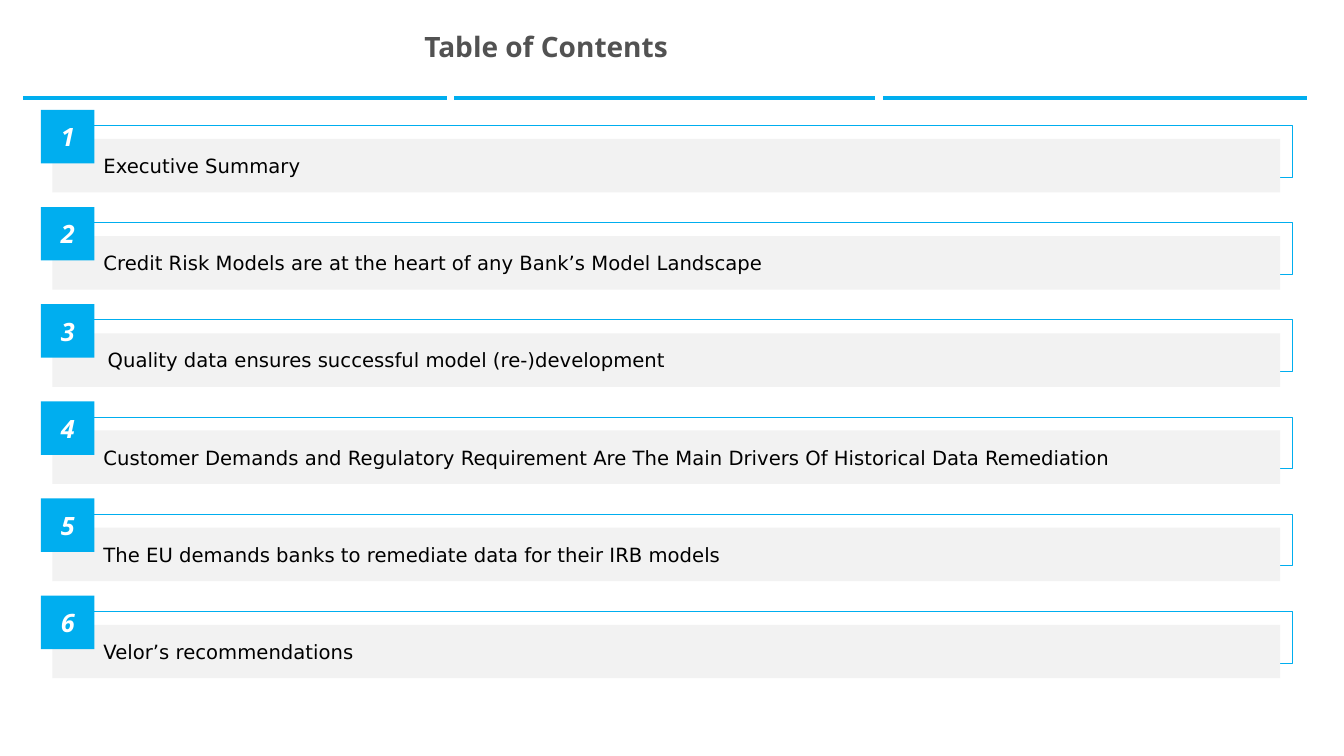
from lxml.etree import SubElement
from pptx import Presentation
from pptx.dml.color import RGBColor
from pptx.enum.shapes import MSO_SHAPE as Shape
from pptx.enum.text import MSO_ANCHOR as Anchor, PP_ALIGN as Align
from pptx.oxml.ns import qn
from pptx.util import Pt

BLUE, GREY, WHITE = "00AEEF", "F2F2F2", "FFFFFF"
ROW_PITCH = 69.4
TEXT_INDENT = 36.5
QUALITY_INDENT = 39.5

entries = [
    ("Executive Summary", TEXT_INDENT),
    ("Credit Risk Models are at the heart of any Bank’s Model Landscape", TEXT_INDENT),
    ("Quality data ensures successful model (re-)development", QUALITY_INDENT),
    ("Customer Demands and Regulatory Requirement Are The Main Drivers "
     "Of Historical Data Remediation", TEXT_INDENT),
    ("The EU demands banks to remediate data for their IRB models", TEXT_INDENT),
    ("Velor’s recommendations", TEXT_INDENT),
]
title_format = {"name": "Open Sans", "size": Pt(20), "bold": True}
entry_format = {"name": "DejaVu Sans", "size": Pt(14)}
number_format = {"name": "Open Sans", "size": Pt(18), "bold": True, "italic": True}


def write(shape, text, formats, color, anchor, margins, align=Align.LEFT):
    """Put one formatted paragraph in a shape; margins run left, top, right, bottom."""
    frame = shape.text_frame
    frame.word_wrap = True
    frame.vertical_anchor = anchor
    for side, margin in zip(("left", "top", "right", "bottom"), margins):
        setattr(frame, f"margin_{side}", Pt(margin))
    para = frame.paragraphs[0]
    para.alignment = align
    span = para.add_run()
    span.text = text
    for name, value in formats.items():
        setattr(span.font, name, value)
    span.font.color.rgb = RGBColor.from_string(color)
    return para


def add_box(group, left, top, width, height, fill=None, line=None):
    box = group.shapes.add_shape(Shape.RECTANGLE, Pt(left), Pt(top), Pt(width), Pt(height))
    box.shadow.inherit = False
    if fill:
        box.fill.solid()
        box.fill.fore_color.rgb = RGBColor.from_string(fill)
    else:
        box.fill.background()
    if line:
        box.line.color.rgb = RGBColor.from_string(line)
        box.line.width = Pt(0.25)
    else:
        box.line.fill.background()
    return box


deck = Presentation()
deck.slide_width, deck.slide_height = Pt(960), Pt(540)
page = deck.slides.add_slide(deck.slide_layouts[6])

# Blue rule in three parts, split by white cell borders
rule = page.shapes.add_table(1, 3, Pt(15.8), Pt(68), Pt(918), Pt(3.6)).table
rule.rows[0].height = Pt(3.6)
for cell, sides in zip(rule.rows[0].cells, (["lnR"], ["lnL", "lnR"], ["lnL"])):
    cell.margin_left = cell.margin_right = cell.margin_top = cell.margin_bottom = 0
    end = SubElement(cell.text_frame.paragraphs[0]._p, qn("a:endParaRPr"))
    end.set("sz", "100")
    for side in sides:
        border = SubElement(cell._tc.get_or_add_tcPr(), qn(f"a:{side}"), w=str(Pt(6)))
        SubElement(SubElement(border, qn("a:solidFill")), qn("a:srgbClr"), val=WHITE)
    cell.fill.solid()
    cell.fill.fore_color.rgb = RGBColor.from_string(BLUE)

title = page.shapes.add_textbox(Pt(296), Pt(19.4), Pt(636), Pt(29.5))
title_para = write(title, "Table of Contents", title_format, "525252",
                   Anchor.BOTTOM, (7.2, 3.6, 7.2, 3.6))
title_para.line_spacing = 0.9

for index, (entry, indent) in enumerate(entries):
    top = 78.5 + index * ROW_PITCH
    group = page.shapes.add_group_shape()
    add_box(group, 52, top + 11, 871, 37, line=BLUE)
    bar = add_box(group, 37.4, top + 20.8, 877, 38.2, fill=GREY)
    write(bar, entry, entry_format, "000000", Anchor.MIDDLE, (indent, 8.6, 7.2, 8.6))
    tile = add_box(group, 29.3, top, 38.2, 38.2, fill=BLUE)
    write(tile, str(index + 1), number_format, WHITE, Anchor.MIDDLE, (0, 0, 0, 0), Align.CENTER)

deck.save("out.pptx")
